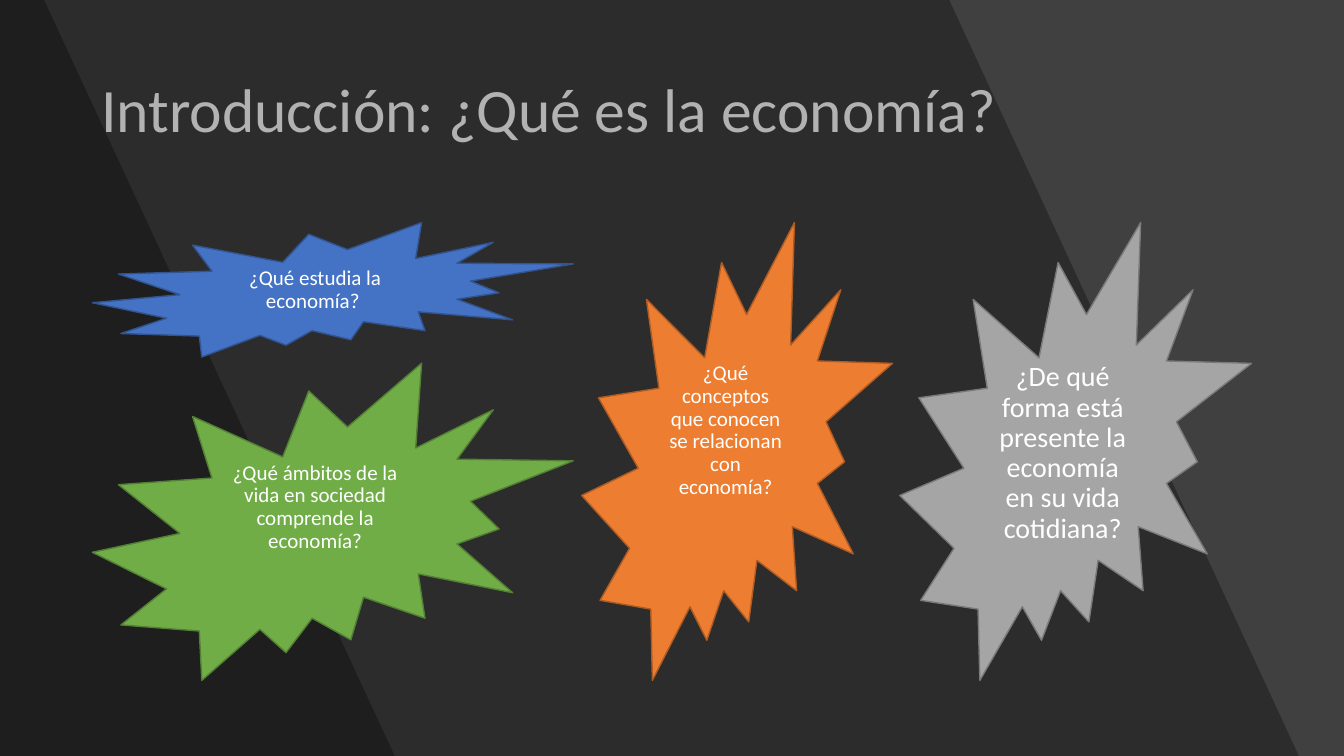
from dataclasses import dataclass

from lxml.etree import SubElement
from pptx import Presentation
from pptx.dml.color import RGBColor
from pptx.enum.shapes import MSO_SHAPE
from pptx.enum.text import MSO_ANCHOR, PP_ALIGN
from pptx.oxml.ns import qn
from pptx.util import Pt

SCALE = 9525  # EMU in one px
WIDTH, HEIGHT = 1280, 720


@dataclass(frozen=True)
class Theme:
    font: str = "Calibri"
    back: str = "404040"
    shade: str = "000000"
    text: str = "FFFFFF"
    blue: tuple = ("4472C4", "325491")
    green: tuple = ("70AD47", "538035")
    orange: tuple = ("ED7D31", "AF5C24")
    gray: tuple = ("A5A5A5", "7A7A7A")
    head: int = 44
    large: int = 20
    small: int = 15


THEME = Theme()


def px(*vals):
    return [val * SCALE for val in vals]


def color(code):
    return RGBColor.from_string(code)


def style(para, size):
    para.line_spacing = 0.9
    para.font.name = THEME.font
    para.font.size = Pt(size)
    para.font.color.rgb = color(THEME.text)


def add_band(slide, box, top, foot):
    """Shade the box from its left edge to a slanted right edge."""
    left, y, _, high = box
    pen = slide.shapes.build_freeform(left, y, scale=SCALE)
    pen.add_line_segments(
        [(left + top, y), (left + foot, y + high), (left, y + high)])
    band = pen.convert_to_shape()
    band.shadow.inherit = False
    band.line.fill.background()
    band.fill.solid()
    band.fill.fore_color.rgb = color(THEME.shade)
    tint = band.fill._xPr.find(qn("a:solidFill"))[0]
    SubElement(tint, qn("a:alpha"), val="30000")


def add_back(slide, box):
    fill = slide.background.fill
    fill.solid()
    fill.fore_color.rgb = color(THEME.back)
    for top, foot in ((904, 1237), (42, 376)):
        add_band(slide, box, top, foot)


def add_title(slide, box, text):
    title = slide.shapes.title
    title.left, title.top, title.width, title.height = px(*box)
    frame = title.text_frame
    frame.text = text
    frame.word_wrap = True
    frame.vertical_anchor = MSO_ANCHOR.MIDDLE
    para = frame.paragraphs[0]
    para.alignment = PP_ALIGN.LEFT
    style(para, THEME.head)


def add_burst(slide, box, text, tones, size):
    burst = slide.shapes.add_shape(MSO_SHAPE.EXPLOSION2, *px(*box))
    burst.shadow.inherit = False
    burst.fill.solid()
    burst.fill.fore_color.rgb = color(tones[0])
    burst.line.color.rgb = color(tones[1])
    burst.line.width = Pt(1)
    frame = burst.text_frame
    frame.word_wrap = True
    frame.vertical_anchor = MSO_ANCHOR.TOP
    frame.text = text
    para = frame.paragraphs[0]
    para.alignment = PP_ALIGN.CENTER
    para.space_after = Pt(6)
    style(para, size)


def add_asks(slide, box):
    """Place two stacked bursts on the left and two tall ones beside them."""
    x, y, wide, high = box
    side, short, gap = 458, 128, 6
    mid, last = 296, 335
    low = short + gap
    asks = (
        ((x, y, side, short), "¿Qué estudia la economía? ",
         THEME.blue, THEME.small),
        ((x, y + low, side, high - low),
         "¿Qué ámbitos de la vida en sociedad comprende la economía?",
         THEME.green, THEME.small),
        ((x + wide - last, y, last, high),
         "¿De qué forma está presente la economía en su vida cotidiana?",
         THEME.gray, THEME.large),
        ((x + side + 8, y, mid, high),
         "¿Qué conceptos que conocen se relacionan con economía?",
         THEME.orange, THEME.small),
    )
    for ask in asks:
        add_burst(slide, *ask)


def main():
    deck = Presentation()
    deck.slide_width, deck.slide_height = px(WIDTH, HEIGHT)
    slide = deck.slides.add_slide(deck.slide_layouts.get_by_name("Title Only"))
    add_back(slide, (0, 0, WIDTH, HEIGHT))
    add_asks(slide, (88, 212, 1104, 436))
    add_title(slide, (87, 38, 1105, 139), "Introducción: ¿Qué es la economía?")
    deck.save("out.pptx")


if __name__ == "__main__":
    main()
